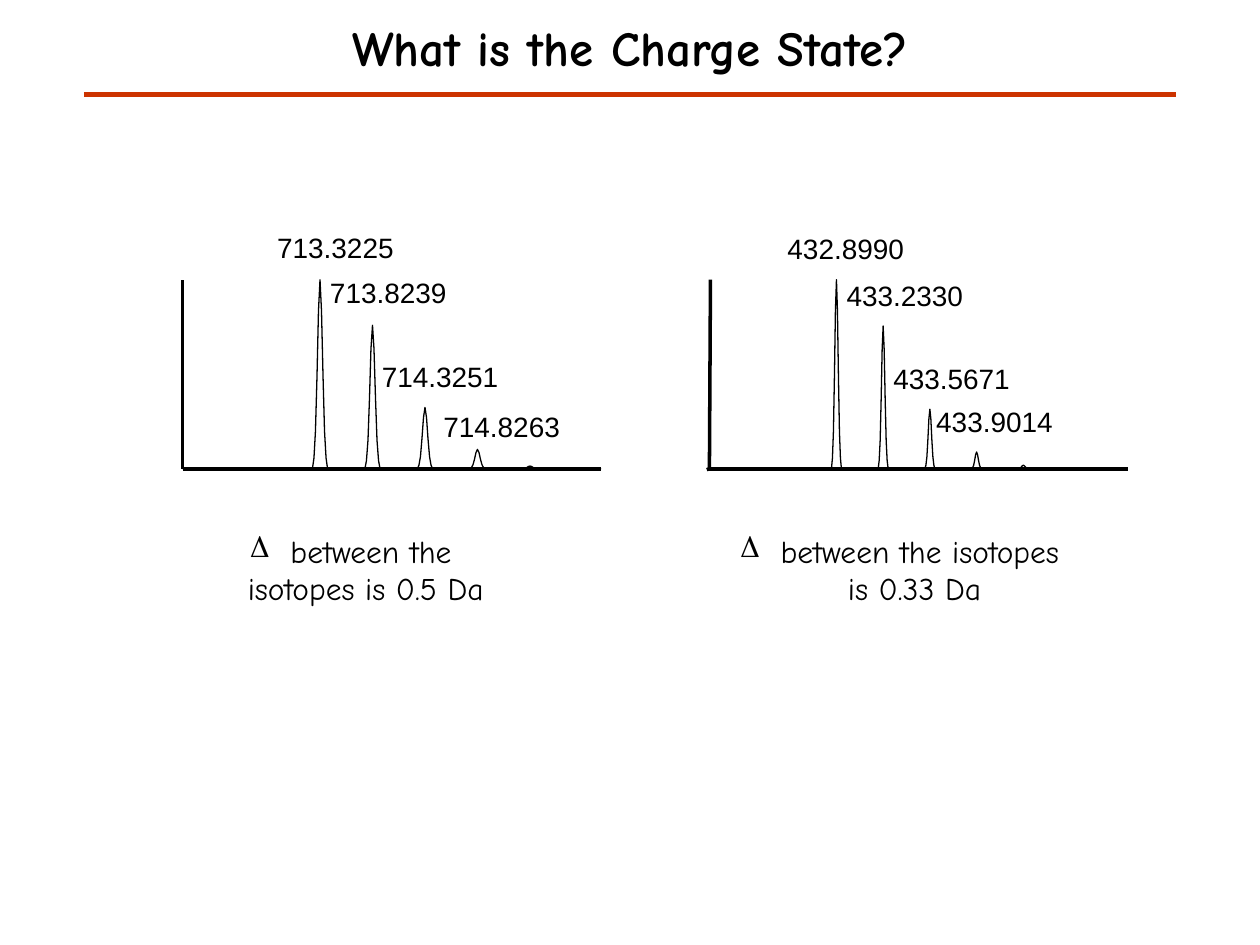
from dataclasses import dataclass
from math import exp

from lxml import etree
from pptx import Presentation, util as u
from pptx.dml import color
from pptx.enum import shapes, text
from pptx.oxml import ns


@dataclass(frozen=True)
class Theme:
    ink: color.RGBColor = color.RGBColor(0, 0, 0)
    rule: color.RGBColor = color.RGBColor(0xCC, 0x33, 0x00)
    hand: str = "Comic Neue"
    plain: str = "Arial"
    title: float = 28
    caption: float = 18
    label: float = 16
    hairline: float = 0
    rule_width: float = 2.5


@dataclass(frozen=True)
class Label:
    mass: str
    x: float
    y: float


@dataclass(frozen=True)
class Spectrum:
    left: float
    first_peak: float
    spacing: float
    sigma: float
    heights: tuple[float, ...]
    labels: tuple[Label, ...]
    caption: str
    caption_left: float
    caption_width: float
    tick: float = 0
    axis_lean: float = 0


T = Theme()
BASELINE, AXIS_TOP, AXIS_WIDTH = 267.84, 159.84, 239.2
SAMPLES = range(-5, 6)
SPECTRA = (
    Spectrum(405.4, 478, 26.7, 0.95, (108, 81.5, 34, 9.5, 2),
             (Label("432.8990", 450, 132.5), Label("433.2330", 483.8, 159.1),
              Label("433.5671", 510.5, 206.6), Label("433.9014", 535, 231.1)),
             " between the isotopes is 0.33 Da", 414, 200.2, tick=1.5, axis_lean=0.6),
    Spectrum(104.4, 182.9, 30, 1.44, (108, 82, 35, 11, 1.5),
             (Label("713.3225", 158.4, 131.8), Label("713.8239", 188.6, 157.7),
              Label("714.3251", 218.2, 205.2), Label("714.8263", 253.4, 234)),
             " between the isotopes is 0.5 Da", 108, 185),
)


def add_line(s, x1: float, y1: float, x2: float, y2: float,
             rgb=T.ink, width: float = T.hairline) -> None:
    c = s.shapes.add_connector(shapes.MSO_CONNECTOR.STRAIGHT,
                               u.Pt(x1), u.Pt(y1), u.Pt(x2), u.Pt(y2))
    c.line.color.rgb = rgb
    c.line.width = u.Pt(width)
    etree.SubElement(c._element.spPr, ns.qn("a:effectLst"))


def add_text(s, words: str, x: float, y: float, w: float, h: float,
             size: float, font: str, bold: bool = False):
    sp = s.shapes.add_textbox(u.Pt(x), u.Pt(y), u.Pt(w), u.Pt(h))
    tf = sp.text_frame
    tf.word_wrap = True
    r = tf.paragraphs[0].add_run()
    r.text = words
    r.font.size = u.Pt(size)
    r.font.name = font
    r.font.bold = bold
    r.font.color.rgb = T.ink
    return tf


def add_label(s, label: Label) -> None:
    tf = add_text(s, label.mass, label.x, label.y, 67, 19.4, T.label, T.plain)
    tf.margin_left = tf.margin_top = tf.margin_right = tf.margin_bottom = 0
    tf.word_wrap = False
    tf.auto_size = text.MSO_AUTO_SIZE.SHAPE_TO_FIT_TEXT


def add_caption(s, spectrum: Spectrum) -> None:
    tf = add_text(s, spectrum.caption, spectrum.caption_left, 300.2,
                  spectrum.caption_width, 51, T.caption, T.hand)
    tf.auto_size = text.MSO_AUTO_SIZE.SHAPE_TO_FIT_TEXT
    p = tf.paragraphs[0]
    p.alignment = text.PP_ALIGN.CENTER
    pPr = p._p.get_or_add_pPr()
    indent = u.Pt(17)
    pPr.set("marL", str(indent))
    pPr.set("indent", str(-indent))
    etree.SubElement(pPr, ns.qn("a:buChar"), char="Δ")


def add_trace(s, spectrum: Spectrum) -> None:
    points = []
    for i, height in enumerate(spectrum.heights):
        center = spectrum.first_peak + i * spectrum.spacing
        for k in SAMPLES:
            offset = 0.6 * k
            rise = 0 if abs(k) == 5 else height * exp(-offset ** 2 / 2)
            points.append((u.Pt(center + offset * spectrum.sigma), u.Pt(BASELINE - rise)))
    points.append((u.Pt(spectrum.left + AXIS_WIDTH), u.Pt(BASELINE)))
    fb = s.shapes.build_freeform(u.Pt(spectrum.left), u.Pt(BASELINE))
    fb.add_line_segments(points, close=False)
    sp = fb.convert_to_shape()
    sp.shadow.inherit = False
    sp.fill.background()
    sp.line.color.rgb = T.ink
    sp.line.width = u.Pt(T.hairline)


def add_spectrum(s, spectrum: Spectrum) -> None:
    x = spectrum.left
    for y in (BASELINE + 0.6, BASELINE):
        add_line(s, x, y, x + AXIS_WIDTH, y)
    add_line(s, x, BASELINE, x + spectrum.axis_lean, AXIS_TOP)
    if spectrum.tick:
        add_line(s, x, BASELINE, x - spectrum.tick, BASELINE + 0.6)
    add_trace(s, spectrum)
    for label in spectrum.labels:
        add_label(s, label)
    add_caption(s, spectrum)


def main() -> None:
    """Build the slide comparing isotope spacing in two spectra."""
    prs = Presentation()
    prs.slide_width, prs.slide_height = u.Pt(720), u.Pt(540)
    s = prs.slides.add_slide(prs.slide_layouts[6])
    for spectrum in SPECTRA:
        add_spectrum(s, spectrum)
    tf = add_text(s, "What is the Charge State?", 0, 0, 720, 54, T.title, T.hand, bold=True)
    tf.vertical_anchor = text.MSO_ANCHOR.MIDDLE
    tf.paragraphs[0].alignment = text.PP_ALIGN.CENTER
    add_line(s, 48, 54, 672, 54, T.rule, T.rule_width)
    prs.save("out.pptx")


if __name__ == "__main__":
    main()
